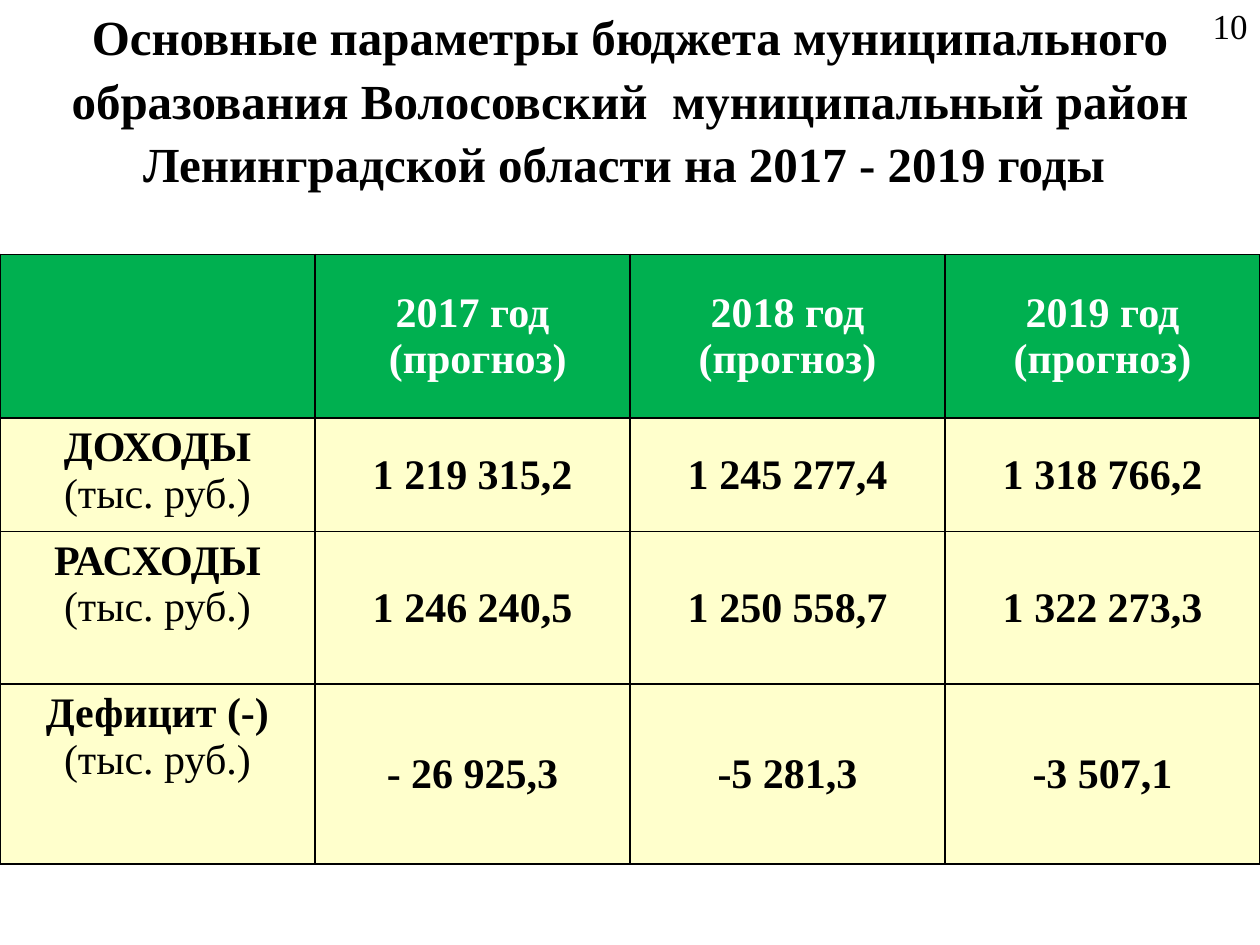
import lxml.etree
import pptx
import pptx.dml.color
import pptx.enum.text
import pptx.oxml.ns
import pptx.util

Pt = pptx.util.Pt
RGBColor = pptx.dml.color.RGBColor
ALIGN = pptx.enum.text.PP_ALIGN
MIDDLE = pptx.enum.text.MSO_ANCHOR.MIDDLE
TOP = pptx.enum.text.MSO_ANCHOR.TOP

BLACK = RGBColor(0x00, 0x00, 0x00)
WHITE = RGBColor(0xFF, 0xFF, 0xFF)
GREEN = RGBColor(0x00, 0xB0, 0x50)
CREAM = RGBColor(0xFF, 0xFF, 0xCC)

SLIDE_WIDTH, SLIDE_HEIGHT = 720, 540
FONT = "Times New Roman"
UNIT = "(тыс. руб.)"
TITLE = ("Основные параметры бюджета муниципального образования Волосовский  "
         "муниципальный район Ленинградской области на 2017 - 2019 годы ")
HEADER = [[], ["2017 год", " (прогноз)"], ["2018 год", "(прогноз)"],
          ["2019 год", "(прогноз)"]]
BUDGET = [
    ("ДОХОДЫ", "1 219 315,2", "1 245 277,4", "1 318 766,2"),
    ("РАСХОДЫ", "1 246 240,5", "1 250 558,7", "1 322 273,3"),
    ("Дефицит (-)", "- 26 925,3", "-5 281,3", "-3 507,1"),
]
ROW_HEIGHTS = [93.6, 60.5, 87, 103]


def write_lines(frame, lines, align, line_spacing=None, **font_format):
    """Write one paragraph per line; the unit line is never bold."""
    for index, line in enumerate(lines):
        paragraph = frame.paragraphs[0] if index == 0 else frame.add_paragraph()
        paragraph.alignment = align
        paragraph.line_spacing = line_spacing
        run = paragraph.add_run()
        run.text = line
        values = {"name": FONT, "bold": line != UNIT, **font_format}
        color = values.pop("color")
        for attribute, value in values.items():
            setattr(run.font, attribute, value)
        run.font.color.rgb = color


def add_text(slide, box, text, align, **text_format):
    frame = slide.shapes.add_textbox(*map(Pt, box)).text_frame
    frame.word_wrap = True
    frame.vertical_anchor = MIDDLE
    write_lines(frame, [text], align, **text_format)


def add_borders(cell):
    properties = cell._tc.get_or_add_tcPr()
    qn = pptx.oxml.ns.qn
    for side in ("a:lnL", "a:lnR", "a:lnT", "a:lnB"):
        line = lxml.etree.SubElement(properties, qn(side), w=str(Pt(1)))
        fill = lxml.etree.SubElement(line, qn("a:solidFill"))
        lxml.etree.SubElement(fill, qn("a:srgbClr"), val=str(BLACK))


def add_budget_table(slide, box):
    rows = [HEADER] + [[[name, UNIT]] + [[value] for value in values]
                       for name, *values in BUDGET]
    table = slide.shapes.add_table(len(rows), len(HEADER), *map(Pt, box)).table
    for column in table.columns:
        column.width = Pt(box[2] / len(HEADER))
    for row_index, (row, height) in enumerate(zip(rows, ROW_HEIGHTS)):
        table.rows[row_index].height = Pt(height)
        is_header = row_index == 0
        for column_index, lines in enumerate(row):
            cell = table.cell(row_index, column_index)
            add_borders(cell)
            cell.fill.solid()
            cell.fill.fore_color.rgb = GREEN if is_header else CREAM
            cell.vertical_anchor = TOP if column_index == 0 else MIDDLE
            write_lines(cell.text_frame, lines, ALIGN.CENTER, size=Pt(24),
                        color=WHITE if is_header else BLACK)


def main():
    presentation = pptx.Presentation()
    presentation.slide_width = Pt(SLIDE_WIDTH)
    presentation.slide_height = Pt(SLIDE_HEIGHT)
    slide = presentation.slides.add_slide(presentation.slide_layouts[6])

    # Title
    add_text(slide, (0, 0, SLIDE_WIDTH, 111), TITLE, ALIGN.CENTER,
             line_spacing=1.08, size=Pt(28), color=BLACK)
    # Budget by year
    add_budget_table(slide, (0, 145.4, SLIDE_WIDTH, sum(ROW_HEIGHTS)))
    # Page number
    add_text(slide, (SLIDE_WIDTH - 48, 0, 48, 29), "10", ALIGN.RIGHT,
             size=Pt(20), bold=False, color=BLACK)

    presentation.save("out.pptx")


if __name__ == "__main__":
    main()
